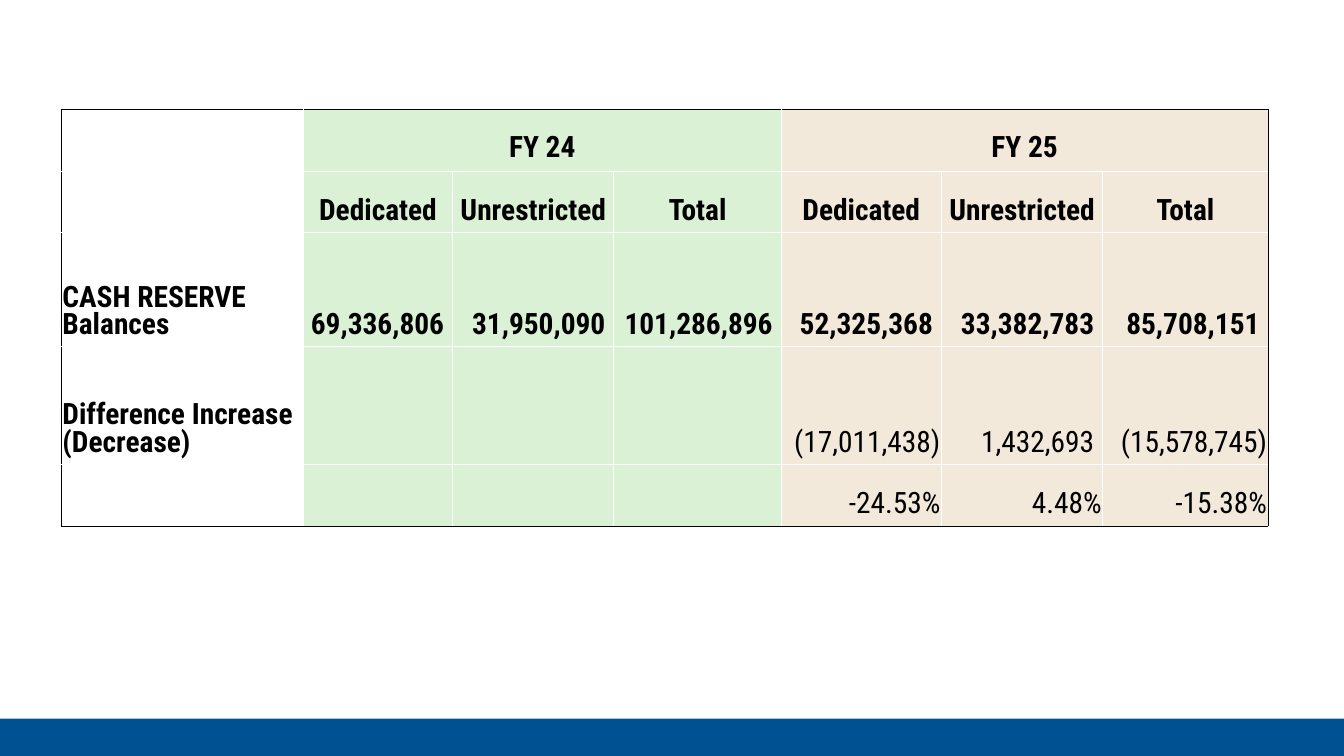
"""Build the cash reserve comparison slide for FY 24 and FY 25."""
from lxml import etree
from pptx import Presentation
from pptx.dml.color import RGBColor
from pptx.enum.shapes import MSO_SHAPE
from pptx.enum.text import MSO_ANCHOR, PP_ALIGN
from pptx.oxml.ns import qn
from pptx.util import Pt

GREEN, SAND = "DBF1D6", "F3E9DB"
COLS = [172.8, 106.6, 115.2, 119.5, 114.5, 115.2, 118.1]
ROWS = [43.9, 43.9, 81.4, 84.2, 43.9]
HEADS = ["Dedicated", "Unrestricted", "Total"]
DATA = [
    ["", "FY 24", "", "", "FY 25", "", ""],
    [""] + HEADS * 2,
    ["CASH RESERVE Balances", "69,336,806", "31,950,090", "101,286,896",
     "52,325,368", "33,382,783", "85,708,151"],
    ["Difference Increase\n(Decrease)", "", "", "",
     "(17,011,438)", "1,432,693", "(15,578,745)"],
    ["", "", "", "", "-24.53%", "4.48%", "-15.38%"],
]


def rgb(color):
    return RGBColor.from_string(color)


def add_border(cell, index, side, outer):
    ln = etree.Element(qn("a:ln" + side), w=str(Pt(0.75 if outer else 1)))
    fill = etree.SubElement(ln, qn("a:solidFill"))
    etree.SubElement(fill, qn("a:srgbClr"), val="000000" if outer else "FFFFFF")
    cell._tc.get_or_add_tcPr().insert(index, ln)


prs = Presentation()
prs.slide_width, prs.slide_height = Pt(960), Pt(540)
s = prs.slides.add_slide(prs.slide_layouts[6])

bar = s.shapes.add_shape(MSO_SHAPE.RECTANGLE, Pt(0), Pt(513.4), Pt(960), Pt(26.6))
bar.shadow.inherit = False
bar.fill.solid()
bar.fill.fore_color.rgb = rgb("005192")
bar.line.fill.background()

table = s.shapes.add_table(len(ROWS), len(COLS), Pt(43.9), Pt(78.5),
                           Pt(sum(COLS)), Pt(sum(ROWS))).table
table.first_row = table.horz_banding = False
for col, width in zip(table.columns, COLS):
    col.width = Pt(width)
for row, height in zip(table.rows, ROWS):
    row.height = Pt(height)
for first in (1, 4):
    table.cell(0, first).merge(table.cell(0, first + 2))

last_row, last_col = len(ROWS) - 1, len(COLS) - 1
for i, values in enumerate(DATA):
    for j, text in enumerate(values):
        cell = table.cell(i, j)
        if j == 0:
            cell.fill.background()
        else:
            cell.fill.solid()
            cell.fill.fore_color.rgb = rgb(GREEN if j < 4 else SAND)
        right_edge = j + (3 if cell.is_merge_origin else 1) > last_col
        edges = [("L", j == 0), ("R", right_edge), ("T", i == 0), ("B", i == last_row)]
        for index, (side, outer) in enumerate(edges):
            add_border(cell, index, side, outer)
        if not text:
            continue

        cell.vertical_anchor = MSO_ANCHOR.BOTTOM
        cell.margin_left = cell.margin_right = Pt(9.4 if i == 0 else 0.7)
        cell.margin_top = Pt(5 if i == 0 else 0.7)
        cell.margin_bottom = Pt(5 if i == 0 else 3.6)
        if i > 1 and text[-1].isdigit():
            cell.margin_right = Pt(6)
        cell.text_frame.text = text
        for p in cell.text_frame.paragraphs:
            p.line_spacing = Pt(19.5)
            if i < 2:
                p.alignment = PP_ALIGN.CENTER
            else:
                p.alignment = PP_ALIGN.RIGHT if j else PP_ALIGN.LEFT
            for r in p.runs:
                r.font.name = "Roboto Condensed"
                r.font.size = Pt(21)
                r.font.bold = i < 3 or j == 0
                r.font.color.rgb = rgb("000000")

prs.save("out.pptx")
